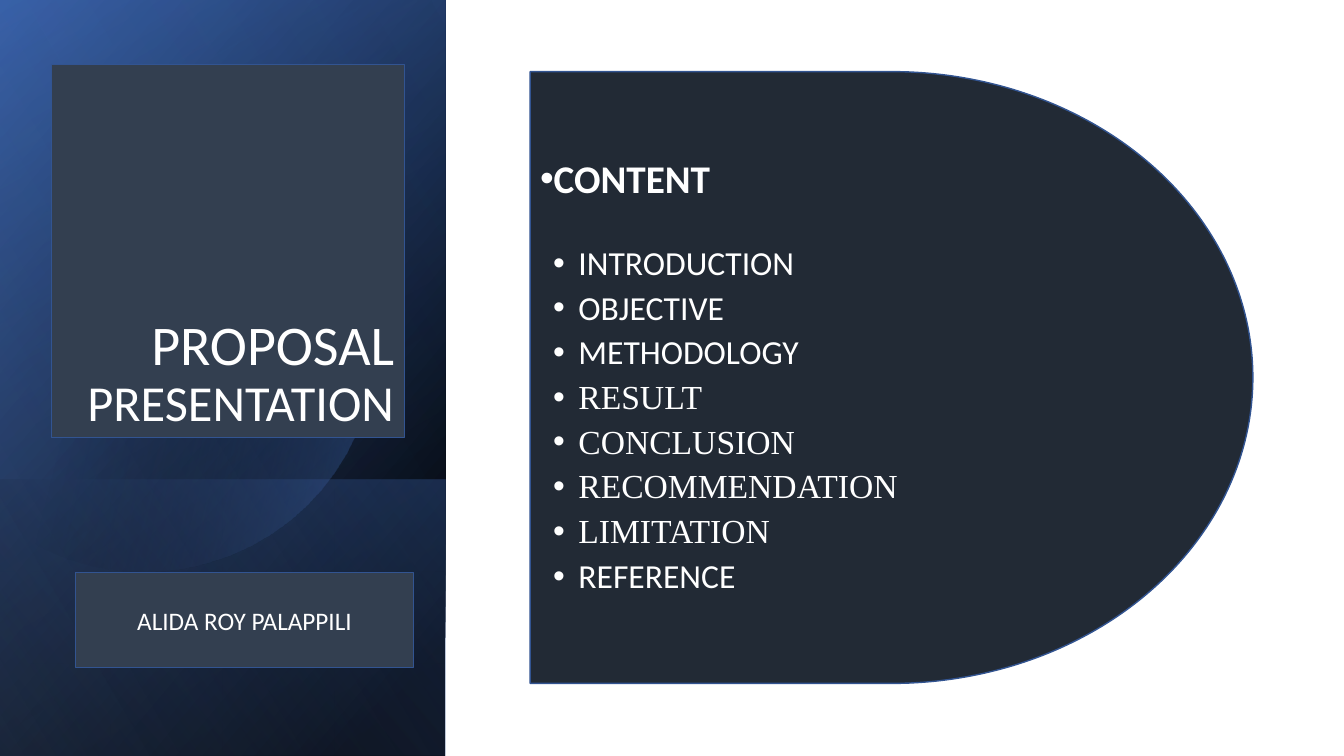
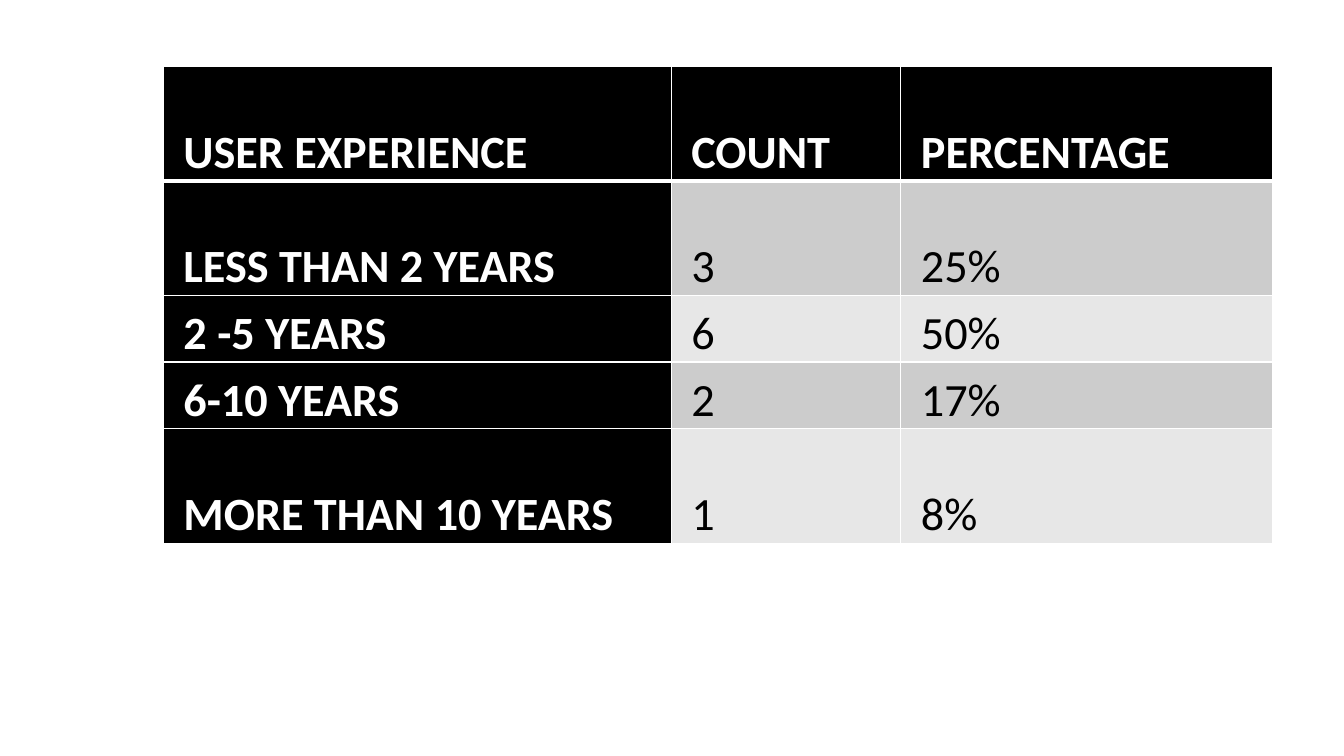
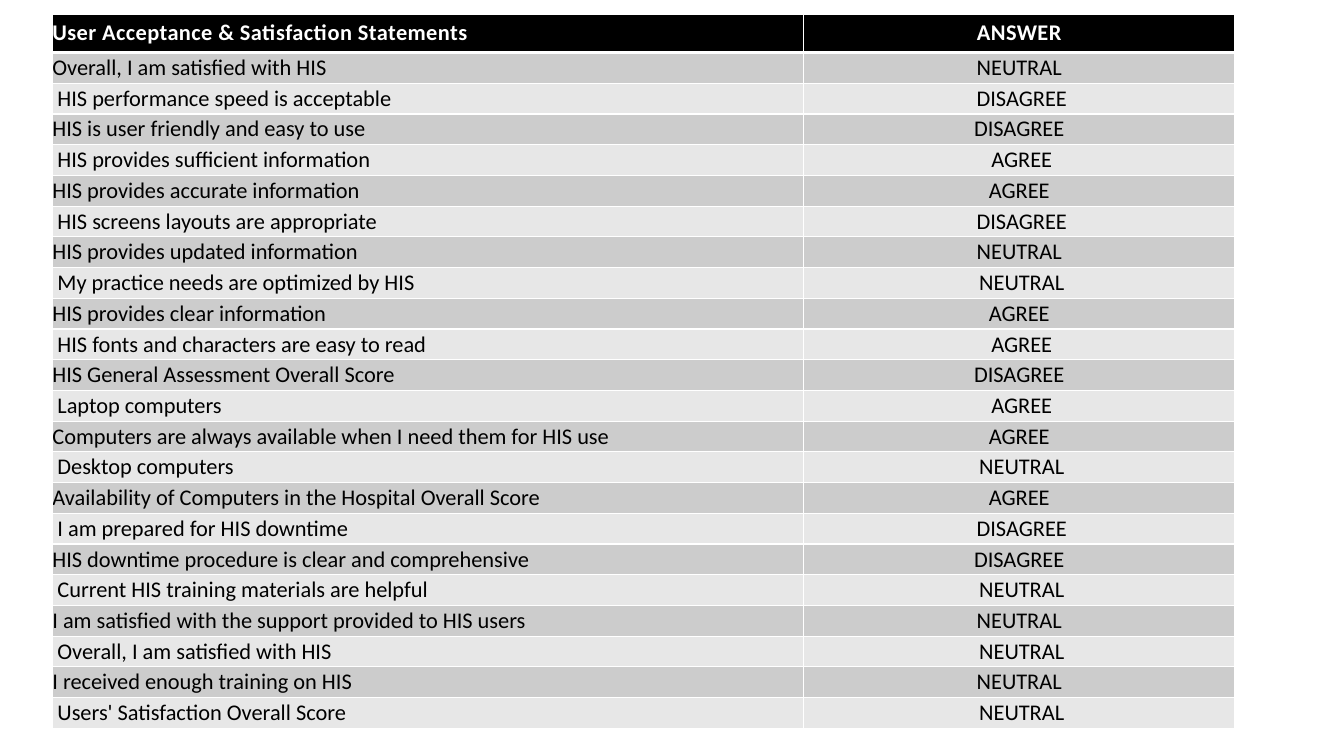
from dataclasses import dataclass
from typing import Any

from lxml.etree import SubElement
from pptx import Presentation
from pptx.dml.color import RGBColor
from pptx.enum.shapes import MSO_SHAPE
from pptx.enum.text import MSO_ANCHOR, MSO_AUTO_SIZE, PP_ALIGN
from pptx.oxml.ns import qn
from pptx.util import Inches, Pt

WIDE, HIGH = Inches(13.33), Inches(7.5)
WHITE = RGBColor(0xFF, 0xFF, 0xFF)
BLACK = RGBColor(0x00, 0x00, 0x00)
BLUE = RGBColor(0x44, 0x72, 0xC4)
DEEP = RGBColor(0x2F, 0x55, 0x97)
PALE = RGBColor(0x8F, 0xAA, 0xDC)
SLATE = RGBColor(0x33, 0x3F, 0x50)
NIGHT = RGBColor(0x22, 0x2A, 0x35)
EDGE = RGBColor(0x32, 0x54, 0x91)
DARK = RGBColor(0xCC, 0xCC, 0xCC)
LIGHT = RGBColor(0xE7, 0xE7, 0xE7)
SANS, SERIF = "Calibri", "Times New Roman"


@dataclass(frozen=True)
class Box:
    left: float
    top: float
    width: float
    height: float

    def frame(self) -> tuple[int, int, int, int]:
        return (across(self.left), down(self.top),
                across(self.width), down(self.height))


@dataclass(frozen=True)
class Stop:
    place: float
    color: RGBColor
    alpha: int = 100


@dataclass(frozen=True)
class Fade:
    start: Stop
    end: Stop
    angle: int


@dataclass(frozen=True)
class Band:
    box: Box
    fade: Fade


@dataclass(frozen=True)
class Line:
    text: str
    size: int = 24
    font: str = SANS
    bold: bool = False
    left: float = 0.38
    after: int = 6


@dataclass(frozen=True)
class Sheet:
    box: Box
    cols: tuple[float, ...]
    rows: tuple[int, ...]
    size: int
    anchor: Any
    aligns: tuple[Any, ...]
    head: bool
    inset: tuple[float, float]
    shift: float = 0
    space: int = 0


FULL = Box(0, 0, 33.15, 100)
FOOT = Box(0, 63.47, 33.15, 36.53)
BACK = [
    Band(FULL, Fade(Stop(8, BLACK), Stop(100, DEEP), 50)),
    Band(FULL, Fade(Stop(0, BLACK, 0), Stop(99, BLUE, 46), 30)),
    Band(FOOT, Fade(Stop(2, BLUE, 29), Stop(100, BLACK, 30), 130)),
]
VEIL = Band(FULL, Fade(Stop(0, BLACK, 0), Stop(99, PALE, 11), 120))
DISC = Fade(Stop(29, BLACK, 0), Stop(100, BLUE, 43), 14)
START = (11.18, 14.67)
CURVES = [
    ((18.45, 14.93), (25.13, 23.6), (27.23, 36.67)),
    ((29.86, 52.93), (24.61, 69.73), (15.53, 74.4)),
    ((9.83, 77.33), (3.98, 74.8), (0, 68.67)),
    ((0, 68.67), (0, 21.47), (0, 21.47)),
    ((1.73, 18.93), (3.75, 17.07), (6, 15.87)),
    ((7.73, 15.07), (9.45, 14.67), START),
]
TOPICS = [
    Line("CONTENT", size=28, bold=True, left=0, after=32),
    Line("INTRODUCTION"),
    Line("OBJECTIVE"),
    Line("METHODOLOGY"),
    Line("RESULT", font=SERIF),
    Line("CONCLUSION", font=SERIF),
    Line("RECOMMENDATION", font=SERIF),
    Line("LIMITATION", font=SERIF),
    Line("REFERENCE"),
]
USERS = [
    ("USER EXPERIENCE", "COUNT", "PERCENTAGE"),
    ("LESS THAN 2 YEARS", "3", "25%"),
    ("2 -5 YEARS", "6", "50%"),
    ("6-10 YEARS", "2", "17%"),
    ("MORE THAN 10 YEARS", "1", "8%"),
]
YES, MID, NO = "AGREE", "NEUTRAL", "DISAGREE"
VIEWS = [
    ("User Acceptance & Satisfaction Statements", "ANSWER"),
    ("Overall, I am satisfied with HIS", MID),
    ("HIS performance speed is acceptable", NO),
    ("HIS is user friendly and easy to use", NO),
    ("HIS provides sufficient information", YES),
    ("HIS provides accurate information", YES),
    ("HIS screens layouts are appropriate", NO),
    ("HIS provides updated information", MID),
    ("My practice needs are optimized by HIS", MID),
    ("HIS provides clear information", YES),
    ("HIS fonts and characters are easy to read", YES),
    ("HIS General Assessment Overall Score", NO),
    ("Laptop computers", YES),
    ("Computers are always available when I need them for HIS use", YES),
    ("Desktop computers", MID),
    ("Availability of Computers in the Hospital Overall Score", YES),
    ("I am prepared for HIS downtime", NO),
    ("HIS downtime procedure is clear and comprehensive", NO),
    ("Current HIS training materials are helpful", MID),
    ("I am satisfied with the support provided to HIS users", MID),
    ("Overall, I am satisfied with HIS", MID),
    ("I received enough training on HIS", MID),
    ("Users' Satisfaction Overall Score", MID),
]
USAGE = Sheet(Box(12.15, 8.8, 82.52, 63.07), (45.8, 20.7, 33.5),
              (12, 12, 7, 7, 12), 33, MSO_ANCHOR.BOTTOM,
              (PP_ALIGN.JUSTIFY,) * 3, True, (0.2, 0.2))
POLL = Sheet(Box(3.9, 1.87, 88, 94.53), (63.5, 36.5),
             (5,) + (4,) * 22, 16, MSO_ANCHOR.MIDDLE,
             (PP_ALIGN.LEFT, PP_ALIGN.CENTER), False, (0, 0), 0.05, 30)


def across(share: float) -> int:
    return round(WIDE * share / 100)


def down(share: float) -> int:
    return round(HIGH * share / 100)


def put(thing: Any, vals: dict[str, Any]) -> None:
    for name, val in vals.items():
        setattr(thing, name, val)


def write(para: Any, text: str, size: int, color: RGBColor = WHITE,
          font: str = SANS, bold: bool = False) -> None:
    run = para.add_run()
    run.text = text
    put(run.font, {"size": Pt(size), "name": font, "bold": bold})
    run.font.color.rgb = color


def paint(shape: Any, color: RGBColor) -> None:
    shape.fill.solid()
    shape.fill.fore_color.rgb = color
    shape.line.color.rgb = EDGE
    shape.line.width = Pt(1)


def blend(shape: Any, fade: Fade) -> None:
    shape.shadow.inherit = False
    shape.line.fill.background()
    shape.fill.gradient()
    shape.fill.gradient_angle = 360 - fade.angle
    stops = (fade.start, fade.end)
    for mark, stop in zip(shape.fill.gradient_stops, stops):
        mark.color.rgb = stop.color
        mark.position = stop.place / 100
    for node, stop in zip(shape.element.iter(qn("a:srgbClr")), stops):
        if stop.alpha < 100:
            SubElement(node, qn("a:alpha"), val=str(stop.alpha * 1000))


def add_band(slide: Any, band: Band) -> None:
    left, top, width, height = band.box.frame()
    gap = (width - height) // 2
    shape = slide.shapes.add_shape(
        MSO_SHAPE.RECTANGLE, left + gap, top - gap, height, width)
    shape.rotation = 90
    shape.element.spPr.find(qn("a:xfrm")).set("flipH", "1")
    blend(shape, band.fade)


def trace() -> list[tuple[int, int]]:
    spots, last, steps = [], START, 16
    for one, two, end in CURVES:
        for step in range(1, steps + 1):
            t = step / steps
            u = 1 - t
            x, y = (u**3 * a + 3 * u * u * t * b + 3 * u * t * t * c + t**3 * d
                    for a, b, c, d in zip(last, one, two, end))
            spots.append((across(x), down(y)))
        last = end
    return spots


def add_disc(slide: Any) -> None:
    pen = slide.shapes.build_freeform(across(START[0]), down(START[1]))
    pen.add_line_segments(trace(), close=True)
    blend(pen.convert_to_shape(), DISC)


def add_panel(slide: Any, kind: Any, box: Box, color: RGBColor) -> Any:
    shape = slide.shapes.add_shape(kind, *box.frame())
    shape.shadow.inherit = False
    paint(shape, color)
    put(shape.text_frame, {"word_wrap": True,
                           "vertical_anchor": MSO_ANCHOR.MIDDLE})
    return shape


def set_title(slide: Any) -> None:
    title = slide.shapes.title
    box = Box(3.83, 8.53, 26.25, 49.33)
    put(title, dict(zip(("left", "top", "width", "height"), box.frame())))
    paint(title, SLATE)
    frame = title.text_frame
    put(frame, {"word_wrap": True, "auto_size": MSO_AUTO_SIZE.NONE,
                "vertical_anchor": MSO_ANCHOR.BOTTOM})
    para = frame.paragraphs[0]
    put(para, {"alignment": PP_ALIGN.RIGHT, "line_spacing": 0.9,
               "space_after": Pt(6)})
    write(para, "PROPOSAL ", 40)
    write(para, "PRESENTATION", 36)
    title.element.getparent().append(title.element)


def add_list(slide: Any) -> None:
    panel = add_panel(slide, MSO_SHAPE.FLOWCHART_DELAY,
                      Box(39.45, 9.47, 53.77, 80.93), NIGHT)
    frame = panel.text_frame
    for num, line in enumerate(TOPICS):
        para = frame.add_paragraph() if num else frame.paragraphs[0]
        put(para, {"alignment": PP_ALIGN.LEFT, "line_spacing": 0.9,
                   "space_after": Pt(line.after)})
        write(para, line.text, line.size, font=line.font, bold=line.bold)
    for node, line in zip(panel.element.iter(qn("a:p")), TOPICS):
        props = node.get_or_add_pPr()
        props.set("marL", str(Inches(line.left)))
        props.set("indent", str(-Inches(0.25)))
        SubElement(props, qn("a:buFont"), typeface="Arial")
        SubElement(props, qn("a:buChar"), char="•")


def add_name(slide: Any) -> None:
    panel = add_panel(slide, MSO_SHAPE.RECTANGLE,
                      Box(5.63, 75.73, 25.13, 12.53), SLATE)
    para = panel.text_frame.paragraphs[0]
    para.alignment = PP_ALIGN.CENTER
    write(para, "ALIDA ROY PALAPPILI", 18)


def rule(node: Any, row: int) -> None:
    props = node.get_or_add_tcPr()
    heavy = {0: "B", 1: "T"}.get(row)
    for side in "LRTB":
        width = Pt(3 if side == heavy else 1)
        edge = SubElement(props, qn(f"a:ln{side}"), w=str(width))
        fill = SubElement(edge, qn("a:solidFill"))
        SubElement(fill, qn("a:srgbClr"), val=str(WHITE))


def add_sheet(slide: Any, sheet: Sheet, data: list[tuple[str, ...]]) -> None:
    left, top, width, height = sheet.box.frame()
    holder = slide.shapes.add_table(
        len(data), len(sheet.cols), left, top, width, height)
    table = holder.table
    put(table, {"first_row": False, "horz_banding": False})
    for col, share in zip(table.columns, sheet.cols):
        col.width = round(width * share / sum(sheet.cols))
    for row, share in zip(table.rows, sheet.rows):
        row.height = round(height * share / sum(sheet.rows))
    nodes = holder.element.iter(qn("a:tc"))
    for r, texts in enumerate(data):
        for c, text in enumerate(texts):
            node, cell = next(nodes), table.cell(r, c)
            black = r == 0 or (sheet.head and c == 0)
            shift = sheet.shift if r and r % 2 == 0 else 0
            rule(node, r)
            cell.fill.solid()
            cell.fill.fore_color.rgb = (
                BLACK if black else DARK if r % 2 else LIGHT)
            put(cell, {"vertical_anchor": sheet.anchor,
                       "margin_left": Inches(sheet.inset[0] + shift),
                       "margin_right": Inches(sheet.inset[1]),
                       "margin_top": 0, "margin_bottom": 0})
            para = cell.text_frame.paragraphs[0]
            para.alignment = sheet.aligns[c]
            write(para, text, sheet.size, WHITE if black else BLACK,
                  bold=black)
            if r == 0 and sheet.space:
                for props in node.iter(qn("a:rPr")):
                    props.set("spc", str(sheet.space))


def main() -> None:
    deck = Presentation()
    put(deck, {"slide_width": WIDE, "slide_height": HIGH})
    named, blank = deck.slide_layouts[5], deck.slide_layouts[6]
    cover = deck.slides.add_slide(named)
    for band in BACK:
        add_band(cover, band)
    add_disc(cover)
    add_band(cover, VEIL)
    set_title(cover)
    add_list(cover)
    add_name(cover)
    for sheet, data in ((USAGE, USERS), (POLL, VIEWS)):
        add_sheet(deck.slides.add_slide(blank), sheet, data)
    deck.save("out.pptx")


if __name__ == "__main__":
    main()
